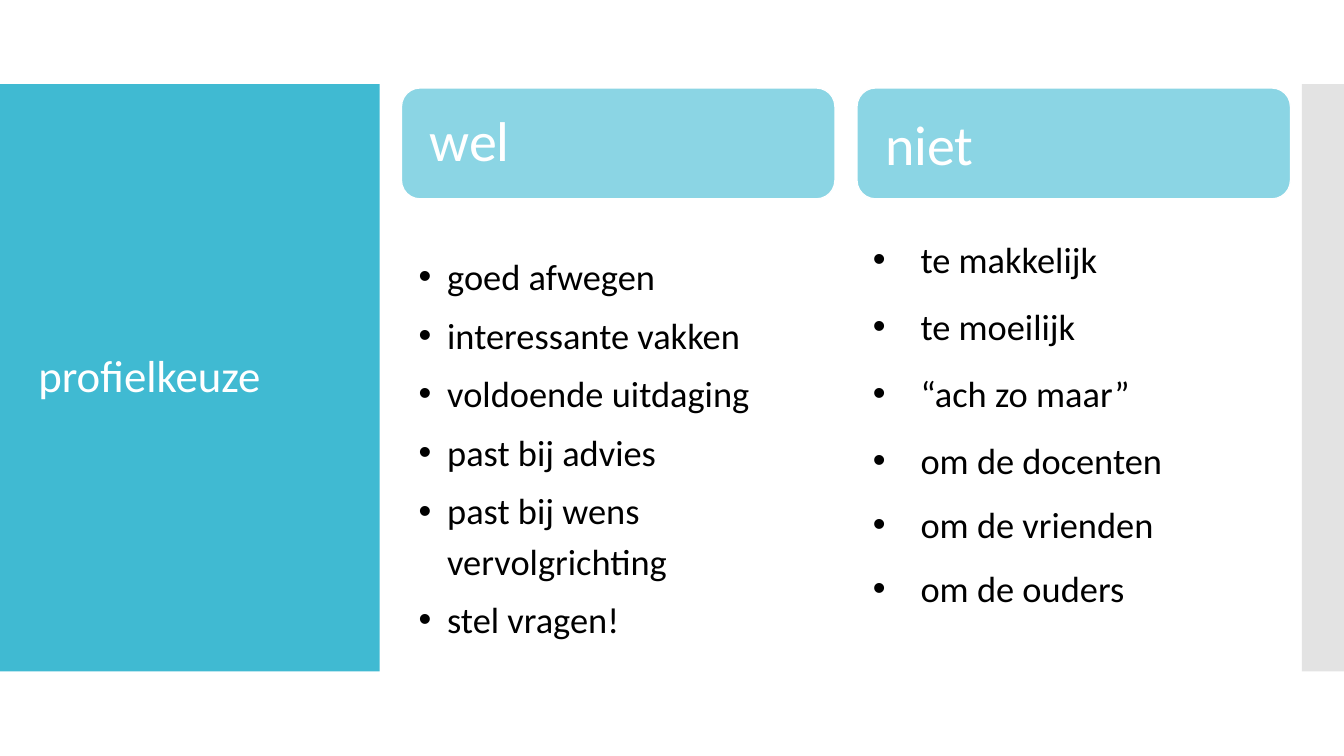
from lxml import etree
from pptx import Presentation
from pptx import util as u
from pptx.dml.color import RGBColor
from pptx.enum import shapes, text
from pptx.oxml.ns import qn

COLOURS = {"panel": "40BAD2", "strip": "C8C8C8", "header": "8BD5E4",
           "light": "FFFFFF", "dark": "000000"}
FONT = "Calibri"

COLUMNS = [
    {"heading": "wel", "left": 10.12, "heading_spacing": 0.9,
     "body": {"shift": 0, "top": 6.14, "indent": 0.79, "hanging": 0.72,
              "margin_top": 0.1, "margin_right": 0.58},
     "items": [("goed afwegen", 0), ("interessante vakken", 6),
               ("voldoende uitdaging", 6), ("past bij advies", 6),
               ("past bij wens vervolgrichting", 6), ("stel vragen!", 6)]},
    {"heading": "niet", "left": 21.6, "heading_spacing": 1.0,
     "body": {"shift": -0.13, "top": 5.65, "indent": 1.37, "hanging": 1.2,
              "margin_top": 0.15, "margin_right": 0.84},
     "items": [("te makkelijk", 0), ("te moeilijk", 12), ("“ach zo maar”", 12),
               ("om de docenten", 12), ("om de vrienden", 10), ("om de ouders", 10)]},
]


def colour(name):
    return RGBColor.from_string(COLOURS[name])


def set_all(target, values):
    for name, value in values.items():
        setattr(target, name, value)


def write(para, words, size, shade, **layout):
    set_all(para, {"alignment": text.PP_ALIGN.LEFT, **layout})
    span = para.add_run()
    span.text = words
    set_all(span.font, {"name": FONT, "size": u.Pt(size)})
    span.font.color.rgb = colour(shade)


def add_block(page, kind, box, fill, alpha=None):
    """Add a flat filled shape without outline; alpha is a percentage."""
    block = page.shapes.add_shape(kind, *map(u.Cm, box))
    block.shadow.inherit = False
    block.fill.solid()
    block.fill.fore_color.rgb = colour(fill)
    block.line.fill.background()
    if alpha is not None:
        tint = block.element.spPr.find(f".//{qn('a:srgbClr')}")
        etree.SubElement(tint, qn("a:alpha"), val=str(alpha * 1000))
    return block


def add_bullet(para, indent, hanging):
    props = para._p.get_or_add_pPr()
    props.set("marL", str(u.Cm(indent)))
    props.set("indent", str(-u.Cm(hanging)))
    etree.SubElement(props, qn("a:buFont"), typeface="Arial")
    etree.SubElement(props, qn("a:buChar"), char="•")


def add_title_panel(page, left, top, width, height):
    add_block(page, shapes.MSO_SHAPE.RECTANGLE, (left, top, width, height), "panel")
    title = page.shapes.title
    page.shapes.element.append(title.element)  # bring in front of the panel
    set_all(title, {"left": u.Cm(left + 0.71), "top": u.Cm(top + 1.02),
                    "width": u.Cm(width - 1.4), "height": u.Cm(height - 2.04)})
    set_all(title.text_frame, {"vertical_anchor": text.MSO_ANCHOR.MIDDLE,
                               "auto_size": text.MSO_AUTO_SIZE.NONE,
                               "word_wrap": True})
    write(title.text_frame.paragraphs[0], "profielkeuze", 32, "light", line_spacing=0.9)


def add_header(page, box, words, spacing):
    header = add_block(page, shapes.MSO_SHAPE.ROUNDED_RECTANGLE, box, "header")
    header.adjustments[0] = 0.167
    header.line.color.rgb = colour("light")
    header.line.width = u.Pt(0.85)
    set_all(header.text_frame, {"margin_left": u.Cm(0.57), "word_wrap": True,
                                "vertical_anchor": text.MSO_ANCHOR.MIDDLE})
    write(header.text_frame.paragraphs[0], words, 40, "light", line_spacing=spacing)


def add_column(page, column, top, width):
    body = column["body"]
    add_header(page, (column["left"], top, width, 2.79),
               column["heading"], column["heading_spacing"])
    box = (column["left"] + body["shift"], body["top"], width, 10.7)
    frame = page.shapes.add_textbox(*map(u.Cm, box)).text_frame
    set_all(frame, {"word_wrap": True, "margin_left": u.Cm(0.36),
                    "margin_right": u.Cm(body["margin_right"]),
                    "margin_top": u.Cm(body["margin_top"])})
    for index, (words, gap) in enumerate(column["items"]):
        para = frame.add_paragraph() if index else frame.paragraphs[0]
        write(para, words, 26, "dark", line_spacing=1.15, space_before=u.Pt(gap))
        add_bullet(para, body["indent"], body["hanging"])


def main():
    deck = Presentation()
    set_all(deck, {"slide_width": u.Cm(33.87), "slide_height": u.Cm(19.05)})
    page = deck.slides.add_slide(deck.slide_layouts[5])
    add_title_panel(page, 0, 2.12, 9.57, 14.8)
    add_block(page, shapes.MSO_SHAPE.RECTANGLE, (32.81, 2.12, 1.06, 14.8), "strip", 50)
    for column in COLUMNS:
        add_column(page, column, top=2.22, width=10.92)
    deck.save("out.pptx")


if __name__ == "__main__":
    main()
